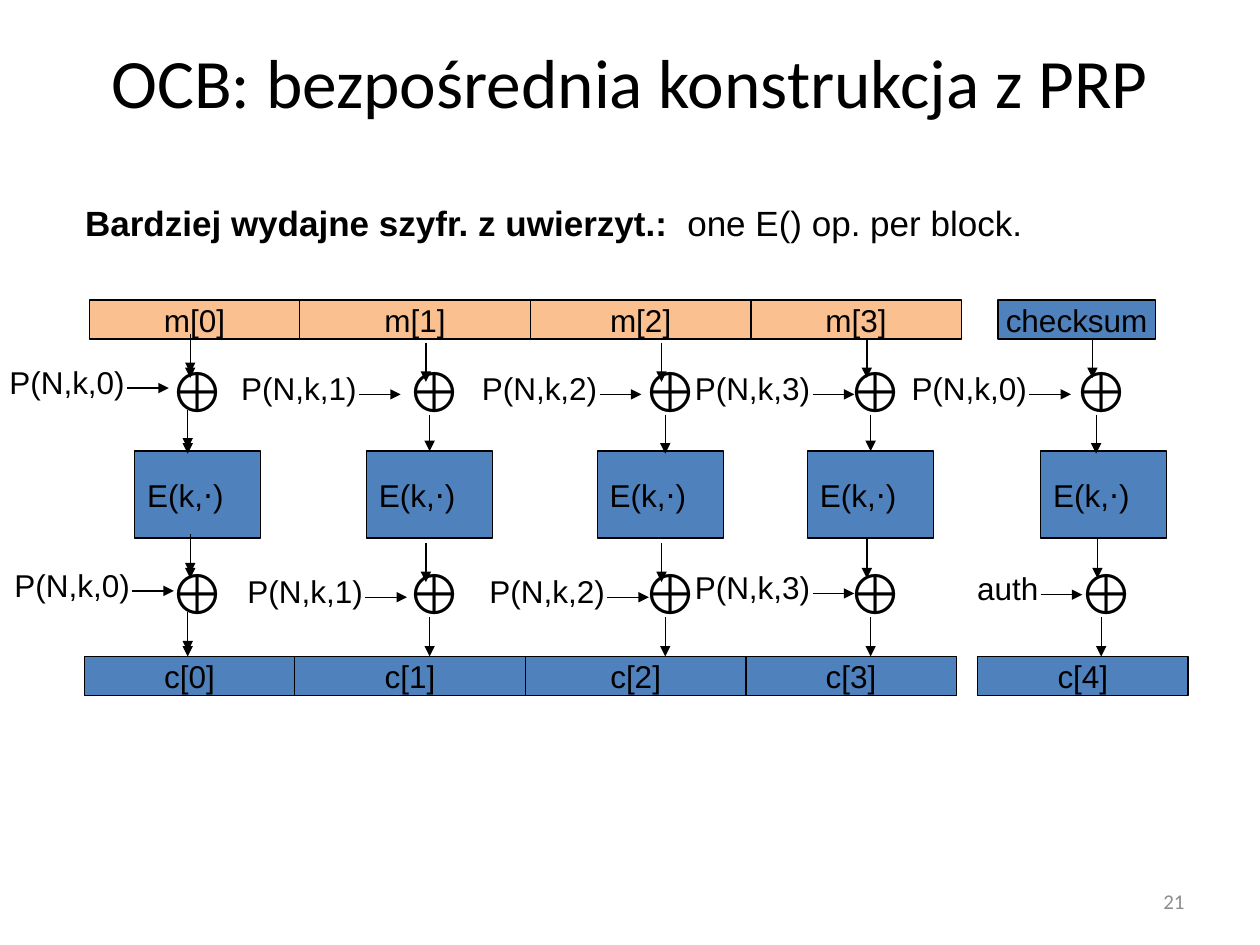
from lxml import etree
from pptx import Presentation
from pptx.dml.color import RGBColor
from pptx.enum.shapes import MSO_CONNECTOR, MSO_SHAPE
from pptx.enum.text import MSO_ANCHOR, MSO_AUTO_SIZE, PP_ALIGN
from pptx.oxml.ns import qn
from pptx.util import Inches, Pt

LEFT, CENTER, RIGHT = PP_ALIGN.LEFT, PP_ALIGN.CENTER, PP_ALIGN.RIGHT
MIDDLE, GROW = MSO_ANCHOR.MIDDLE, MSO_AUTO_SIZE.SHAPE_TO_FIT_TEXT
RECTANGLE, STRAIGHT = MSO_SHAPE.RECTANGLE, MSO_CONNECTOR.STRAIGHT

BLACK, GREY, ORANGE, BLUE = "000000", "8C8C8C", "FAC090", "4F81BD"

TITLE = "OCB: bezpośrednia konstrukcja z PRP"
LEAD = (" Bardziej wydajne szyfr. z uwierzyt.:  ", "one E() op. per block.")
PAGE_NUMBER = "21"
CIPHER, XOR = "E(k,⋅)", "⊕"

# Each block is (text, left, width); each mask is (text, left, top, width).
# Arrows into and out of an XOR are offsets from its left edge.
COLUMNS = [
    {"message": ("m[0]", 0.71, 1.67), "output": ("c[0]", 0.67, 1.67), "cipher": 1.07,
     "xors": (1.25, 1.25), "arrows": (0.26, 0.24), "drop": 0, "echo": True,
     "masks": [("P(N,k,0)", -0.04, 2.83, 1.13), ("P(N,k,0)", 0, 4.44, 1.13)]},
    {"message": ("m[1]", 2.38, 1.83), "output": ("c[1]", 2.34, 1.83), "cipher": 2.91,
     "xors": (3.13, 3.13), "arrows": (0.25, 0.28), "drop": 0.03, "echo": False,
     "masks": [("P(N,k,1)", 1.8, 2.88, 1.13), ("P(N,k,1)", 1.85, 4.49, 1.13)]},
    {"message": ("m[2]", 4.21, 1.75), "output": ("c[2]", 4.17, 1.75), "cipher": 4.74,
     "xors": (5, 5), "arrows": (0.25, 0.28), "drop": 0.03, "echo": False,
     "masks": [("P(N,k,2)", 3.71, 2.88, 1.13), ("P(N,k,2)", 3.77, 4.49, 1.13)]},
    {"message": ("m[3]", 5.96, 1.67), "output": ("c[3]", 5.92, 1.67), "cipher": 6.41,
     "xors": (6.63, 6.63), "arrows": (0.25, 0.28), "drop": 0, "echo": False,
     "masks": [("P(N,k,3)", 5.4, 2.88, 1.13), ("P(N,k,3)", 5.4, 4.46, 1.13)]},
    {"message": ("checksum", 7.92, 1.25), "output": ("c[4]", 7.76, 1.67), "cipher": 8.26,
     "xors": (8.42, 8.46), "arrows": (0.25, 0.28), "drop": 0, "echo": False,
     "masks": [("P(N,k,0)", 7.12, 2.88, 1.13), ("auth", 7.65, 4.47, 0.69)]},
]

MESSAGE_TOP, CIPHER_TOP, OUTPUT_TOP = 2.38, 3.58, 5.21
BLOCK_HEIGHT, CIPHER_WIDTH, CIPHER_HEIGHT = 0.31, 1, 0.69
XOR_TOPS, IN_TOPS, OUT_TOPS = (2.78, 4.38), (2.69, 4.28), (3.29, 4.9)
DOWN, ACROSS, ECHO_RISE = 0.31, 0.33, 0.04


def color(hex_string):
    return RGBColor.from_string(hex_string)


def style(run, size, font="Arial", ink=BLACK, bold=False):
    run.font.size, run.font.name, run.font.bold = Pt(size), font, bold
    run.font.color.rgb = color(ink)


def place(left, top, width, height):
    return [Inches(v) for v in (left, top, width, height)]


def add_block(shapes, text, box, fill, align=CENTER):
    block = shapes.add_shape(RECTANGLE, *place(*box))
    block.shadow.inherit = False
    block.fill.solid()
    block.fill.fore_color.rgb = color(fill)
    block.line.color.rgb = color(BLACK)
    block.line.width = Pt(0.75)
    frame = block.text_frame
    frame.text, frame.word_wrap, frame.vertical_anchor = text, False, MIDDLE
    frame.paragraphs[0].alignment = align
    style(frame.paragraphs[0].runs[0], 18)
    return block


def add_label(shapes, text, box, size, align=LEFT):
    frame = shapes.add_textbox(*place(*box)).text_frame
    frame.text, frame.word_wrap, frame.auto_size = text, False, GROW
    frame.paragraphs[0].alignment = align
    style(frame.paragraphs[0].runs[0], size)


def add_arrow(shapes, x, y, dx=0, dy=0):
    arrow = shapes.add_connector(STRAIGHT, *place(x, y, x + dx, y + dy))
    arrow.line.color.rgb = color(BLACK)
    arrow.line.width = Pt(0.75)
    etree.SubElement(arrow.line._get_or_add_ln(), qn("a:tailEnd"), type="triangle")
    etree.SubElement(arrow._element.spPr, qn("a:effectLst"))
    return arrow


def add_mask(shapes, text, left, top, width):
    """Group a mask label with the arrow that leads from it to its XOR."""
    group = shapes.add_group_shape().shapes
    add_arrow(group, left + width - 0.08, top + 0.25, dx=ACROSS)
    add_label(group, text, (left, top, width, 0.4), 18, RIGHT)


def add_column(shapes, column):
    text, left, width = column["message"]
    fill = ORANGE if text.startswith("m") else BLUE
    add_block(shapes, text, (left, MESSAGE_TOP, width, BLOCK_HEIGHT), fill)
    cipher_box = (column["cipher"], CIPHER_TOP, CIPHER_WIDTH, CIPHER_HEIGHT)
    cipher = add_block(shapes, CIPHER, cipher_box, BLUE, LEFT)
    text, left, width = column["output"]
    add_block(shapes, text, (left, OUTPUT_TOP, width, BLOCK_HEIGHT), BLUE)

    cipher_middle = column["cipher"] + CIPHER_WIDTH / 2
    into, out = column["arrows"]
    stages = zip(column["xors"], XOR_TOPS, IN_TOPS, OUT_TOPS, column["masks"])
    for stage, (xor, xor_top, in_top, out_top, mask) in enumerate(stages):
        add_label(shapes, XOR, (xor, xor_top, 0.55, 0.64), 32)
        for rise in (0, ECHO_RISE) if column["echo"] else (0,):
            add_arrow(shapes, xor + into, in_top + column["drop"] - rise, dy=DOWN)
            leaving = add_arrow(shapes, xor + out, out_top - rise, dy=DOWN)
            if stage == 0 and abs(xor + out - cipher_middle) < 0.01:
                leaving.end_connect(cipher, 0)
        add_mask(shapes, *mask)


def main():
    deck = Presentation()
    deck.slide_width, deck.slide_height = Inches(10), Inches(7.5)
    slide = deck.slides.add_slide(deck.slide_layouts[5])
    shapes = slide.shapes

    title = shapes.title
    title.left, title.top, title.width, title.height = place(0.5, 0.3, 9, 0.69)
    title.text_frame.text = TITLE
    title.text_frame.vertical_anchor = MIDDLE
    title.text_frame.paragraphs[0].alignment = CENTER
    style(title.text_frame.paragraphs[0].runs[0], 39.6, "Calibri")

    page = shapes.add_textbox(*place(7.17, 6.95, 2.33, 0.4)).text_frame
    page.text, page.word_wrap, page.vertical_anchor = PAGE_NUMBER, True, MIDDLE
    page.paragraphs[0].alignment = RIGHT
    style(page.paragraphs[0].runs[0], 12, "Calibri", GREY)

    lead = shapes.add_textbox(*place(0.5, 1.55, 9, 0.65)).text_frame
    lead.word_wrap = True
    lead.paragraphs[0].space_before = Pt(4)
    for text, bold in zip(LEAD, (True, False)):
        run = lead.paragraphs[0].add_run()
        run.text = text
        style(run, 20, bold=bold)

    for column in COLUMNS:
        add_column(shapes, column)
    deck.save("out.pptx")


if __name__ == "__main__":
    main()
